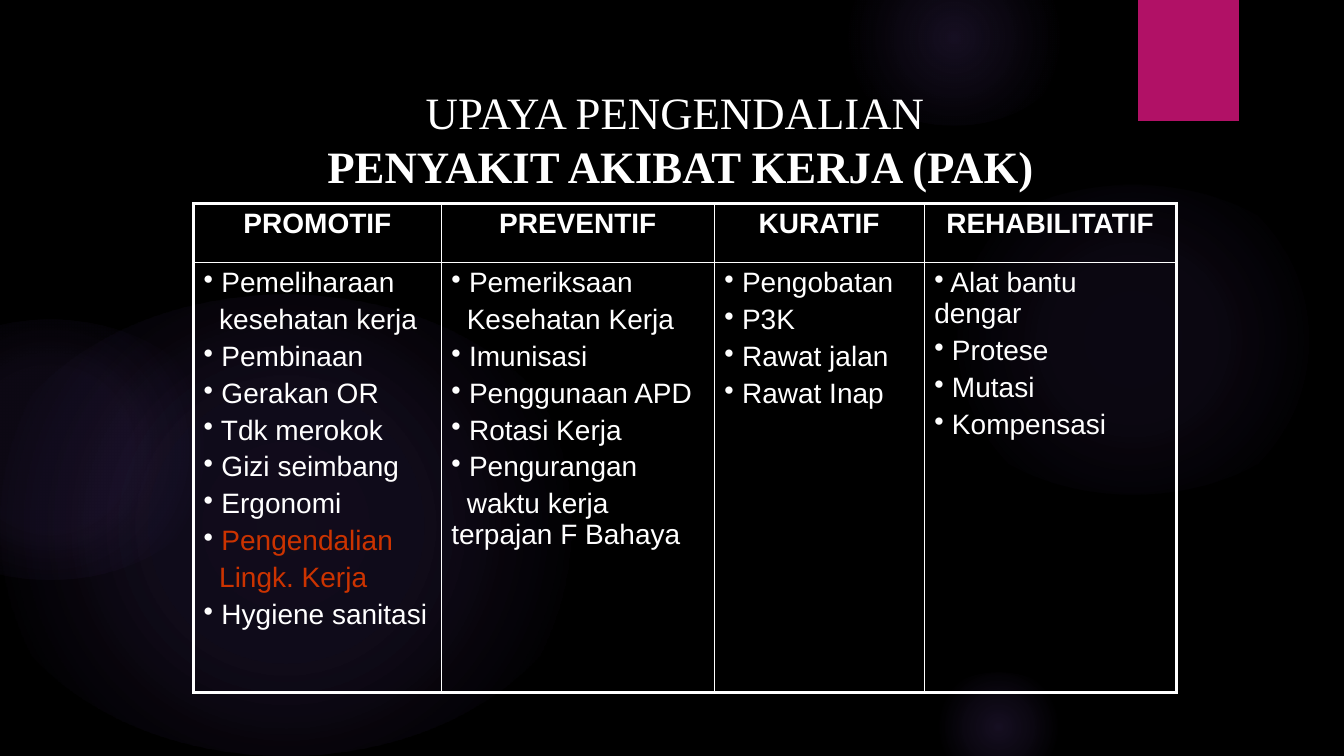
from lxml import etree
from pptx import Presentation
from pptx.dml.color import RGBColor
from pptx.enum.shapes import MSO_SHAPE as Shape
from pptx.enum.text import PP_ALIGN as Align
from pptx.oxml import parse_xml
from pptx.oxml.ns import qn
from pptx.util import Cm, Pt

BLACK = RGBColor(0x00, 0x00, 0x00)
WHITE = RGBColor(0xFF, 0xFF, 0xFF)
MAGENTA = RGBColor(0xB1, 0x11, 0x66)
VIOLET = RGBColor(0x9B, 0x6B, 0xF2)
RED = RGBColor(0xCC, 0x33, 0x00)

NAMESPACE = 'xmlns:a="http://schemas.openxmlformats.org/drawingml/2006/main"'
TITLE_FORMAT = {"name": "Times New Roman", "size": Pt(32)}
TABLE_FORMAT = {"name": "Arial", "size": Pt(20)}

GLOWS = [
    ((23.34, 4.65, 10.44, 7.82), ((0, 7), (36, 6), (69, 0))),
    ((21.08, -1.27, 5.92, 4.44), ((0, 14), (36, 7), (73, 0))),
    ((23.34, 16.94, 3.66, 2.74), ((0, 14), (36, 7), (66, 0))),
    ((-0.56, 7.42, 15.52, 11.63), ((0, 11), (36, 10), (75, 0))),
    ((-3.1, 8.05, 8.74, 6.55), ((0, 8), (36, 8), (72, 0))),
]
COLUMN_WIDTHS = (6.24, 6.88, 5.29, 6.35)
ROW_HEIGHTS = (1.48, 10.84)
EFFORTS = {
    "PROMOTIF": ["• Pemeliharaan", "kesehatan kerja", "• Pembinaan", "• Gerakan OR",
                 "• Tdk merokok", "• Gizi seimbang", "• Ergonomi", "• Pengendalian",
                 "Lingk. Kerja", "• Hygiene sanitasi"],
    "PREVENTIF": ["• Pemeriksaan", "Kesehatan Kerja", "• Imunisasi", "• Penggunaan APD",
                  "• Rotasi Kerja", "• Pengurangan", "waktu kerja terpajan F Bahaya"],
    "KURATIF": ["• Pengobatan", "• P3K", "• Rawat jalan", "• Rawat Inap"],
    "REHABILITATIF": ["• Alat bantu dengar", "• Protese", "• Mutasi", "• Kompensasi"],
}
HIGHLIGHTED = ("• Pengendalian", "Lingk. Kerja")


def add_run(paragraph, text, formats, bold=False, color=WHITE):
    """Add a formatted run to a paragraph."""
    run = paragraph.add_run()
    run.text = text
    for name, value in {**formats, "bold": bold}.items():
        setattr(run.font, name, value)
    run.font.color.rgb = color


def add_glow(slide, box, stops):
    """Add an ellipse whose violet light fades from the centre outwards."""
    shape = slide.shapes.add_shape(Shape.OVAL, *map(Cm, box))
    shape.shadow.inherit = False
    shape.line.fill.background()
    shape.fill.gradient()
    gradient = shape.fill._fill._gradFill
    stop_xml = "".join(
        f'<a:gs pos="{position * 1000}"><a:srgbClr val="{VIOLET}">'
        f'<a:alpha val="{opacity * 1000}"/></a:srgbClr></a:gs>'
        for position, opacity in stops)
    radial = parse_xml(
        f'<a:gradFill {NAMESPACE} rotWithShape="1"><a:gsLst>{stop_xml}</a:gsLst>'
        '<a:path path="circle"><a:fillToRect l="50000" t="50000" r="50000" b="50000"/>'
        '</a:path></a:gradFill>')
    gradient.getparent().replace(gradient, radial)


def add_ribbon(slide, box):
    """Add the magenta tab at the top edge with its soft shadow."""
    shape = slide.shapes.add_shape(Shape.RECTANGLE, *map(Cm, box))
    shape.shadow.inherit = False
    shape.fill.solid()
    shape.fill.fore_color.rgb = MAGENTA
    shape.line.fill.background()
    effects = shape._element.spPr.find(qn("a:effectLst"))
    effects.append(parse_xml(
        f'<a:outerShdw {NAMESPACE} blurRad="{Pt(3)}" dist="{Pt(2)}" dir="5400000">'
        f'<a:srgbClr val="{BLACK}"><a:alpha val="45000"/></a:srgbClr></a:outerShdw>'))


def add_title(slide, box):
    """Add the two centred title lines."""
    frame = slide.shapes.add_textbox(*map(Cm, box)).text_frame
    frame.word_wrap = True
    first, second = frame.paragraphs[0], frame.add_paragraph()
    first.alignment = second.alignment = Align.CENTER
    add_run(first, "UPAYA PENGENDALIAN ", TITLE_FORMAT)
    add_run(second, "PENYAKIT AKIBAT KERJA (PAK)", TITLE_FORMAT, bold=True)


def style_cell(cell, outer_sides):
    """Draw white borders, thicker on the outer sides, and clear the fill."""
    properties = cell._tc.get_or_add_tcPr()
    for side in "LRTB":
        width = Pt(2.25 if side in outer_sides else 1)
        properties.append(parse_xml(
            f'<a:ln{side} {NAMESPACE} w="{width}"><a:solidFill>'
            f'<a:srgbClr val="{WHITE}"/></a:solidFill></a:ln{side}>'))
    cell.fill.background()


def fill_items(frame, items):
    """Write bulleted items; lines without a bullet continue the item above."""
    for index, item in enumerate(items):
        paragraph = frame.add_paragraph() if index else frame.paragraphs[0]
        paragraph.space_before = Pt(4)
        properties = paragraph._p.get_or_add_pPr()
        properties.set("marL", "0")
        bulleted = item.startswith("•")
        properties.set("indent", str(0 if bulleted else Cm(0.39)))
        if bulleted:
            etree.SubElement(properties, qn("a:buChar")).set("char", "•")
            add_run(paragraph, " ", TABLE_FORMAT)
        color = RED if item in HIGHLIGHTED else WHITE
        add_run(paragraph, item.removeprefix("• "), TABLE_FORMAT, color=color)


def add_effort_table(slide, box):
    """Add the table with one column for each kind of effort."""
    table = slide.shapes.add_table(2, len(EFFORTS), *map(Cm, box)).table
    table.first_row = table.horz_banding = False
    for row, height in zip(table.rows, ROW_HEIGHTS):
        row.height = Cm(height)
    last = len(EFFORTS) - 1
    for index, (heading, items) in enumerate(EFFORTS.items()):
        table.columns[index].width = Cm(COLUMN_WIDTHS[index])
        sides = ("L" if index == 0 else "") + ("R" if index == last else "")
        head, body = table.cell(0, index), table.cell(1, index)
        style_cell(head, sides + "T")
        style_cell(body, sides + "B")
        paragraph = head.text_frame.paragraphs[0]
        paragraph.alignment = Align.CENTER
        paragraph.space_before = Pt(4)
        add_run(paragraph, heading, TABLE_FORMAT, bold=True)
        fill_items(body.text_frame, items)


def main():
    """Build the slide and save the presentation."""
    presentation = Presentation()
    presentation.slide_width, presentation.slide_height = Cm(33.87), Cm(19.05)
    slide = presentation.slides.add_slide(presentation.slide_layouts[6])
    slide.background.fill.solid()
    slide.background.fill.fore_color.rgb = BLACK
    for box, stops in GLOWS:
        add_glow(slide, box, stops)
    add_ribbon(slide, (28.68, 0, 2.54, 3.05))
    add_title(slide, (6.65, 2.01, 21.01, 2.97))
    add_effort_table(slide, (4.88, 5.13, sum(COLUMN_WIDTHS), sum(ROW_HEIGHTS)))
    presentation.save("out.pptx")


if __name__ == "__main__":
    main()
